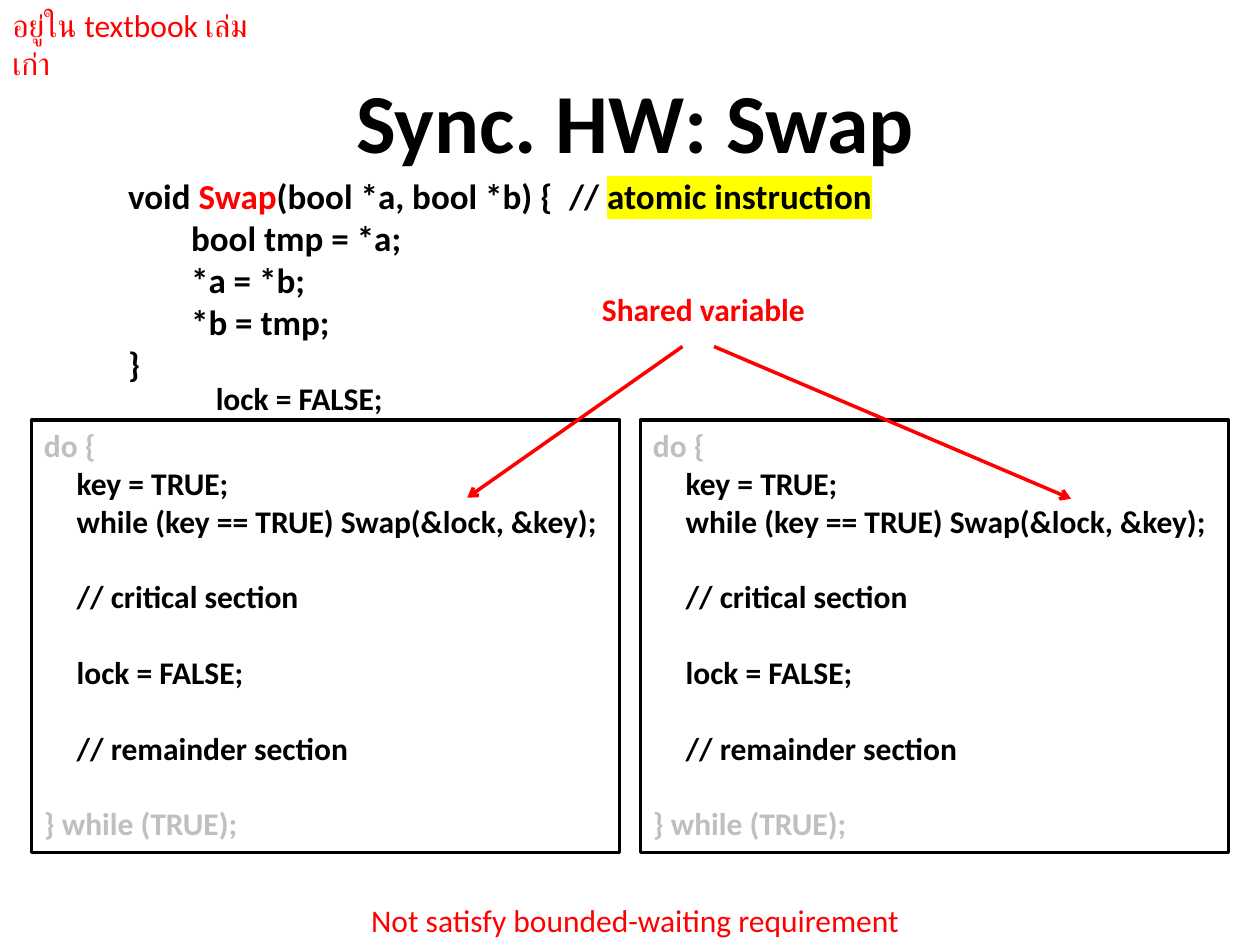
from typing import NamedTuple

from lxml import etree
from pptx import Presentation, util as u
from pptx.dml.color import RGBColor
from pptx.enum import shapes, text
from pptx.oxml.ns import qn

COLORS = {"ink": "000000", "accent": "FF0000", "muted": "BFBFBF", "mark": "FFFF00"}
FONT = "Calibri"
CELL = u.Inches(1 / 12)  # the slide is a grid of 120 columns by 90 rows
COLS, ROWS = 120, 90
LINE = 21.6  # height in points of one 18 pt line


class Box(NamedTuple):
    col: float
    row: float
    cols: float
    rows: float


class Label(NamedTuple):
    text: str
    box: Box
    color: str = "accent"
    bold: bool = False
    align: text.PP_ALIGN = text.PP_ALIGN.CENTER


class Arrow(NamedTuple):
    col: float
    row: float
    to_col: float
    to_row: float


class CodeLine(NamedTuple):
    text: str
    color: str = "ink"
    indent: float = 0.26
    gap: float = 0


TITLE_BOX = Box(7, 6, 107, 10.9)
SWAP_BOX = Box(11, 16, 102, 21.4)
PROCESS_BOXES = [Box(col, 40, 56, 41.2) for col in (3, 61)]
SWAP_BODY = ["bool tmp = *a;", "*a = *b;", "*b = tmp;"]
PROCESS_CODE = [
    CodeLine("do {", "muted", 0),
    CodeLine("key = TRUE;"),
    CodeLine("while (key == TRUE) Swap(&lock, &key);"),
    CodeLine("// critical section", gap=LINE),
    CodeLine("lock = FALSE;", gap=LINE),
    CodeLine("// remainder section", gap=LINE),
    CodeLine("} while (TRUE);", "muted", 0, LINE),
]
ARROWS = [Arrow(65, 33, 44.5, 47.4), Arrow(68, 33, 102, 47.5)]
LABELS = [
    Label("Shared variable", Box(55, 27, 24, 4.8), bold=True),
    Label("lock = FALSE;", Box(14.5, 35.5, 28, 4.8), "ink", True),
    Label("Not satisfy bounded-waiting requirement", Box(11, 85.2, 99, 4.8)),
    Label("อยู่ใน textbook เล่มเก่า", Box(0, 0, 28, 4.8), align=text.PP_ALIGN.LEFT),
]


def emu(cells: float) -> int:
    return round(cells * CELL)


def rgb(name: str) -> RGBColor:
    return RGBColor.from_string(COLORS[name])


def place(sp, box: Box) -> None:
    sp.left, sp.top, sp.width, sp.height = map(emu, box)


def setup_frame(sp):
    tf = sp.text_frame
    tf.word_wrap = True
    tf.auto_size = text.MSO_AUTO_SIZE.NONE
    tf.vertical_anchor = text.MSO_ANCHOR.TOP
    return tf


def add_run(p, words: str, *, size: float = 18, color: str = "ink",
            bold: bool = True, mark: str = "") -> None:
    r = p.add_run()
    r.text = words
    r.font.name, r.font.size, r.font.bold = FONT, u.Pt(size), bold
    r.font.color.rgb = rgb(color)
    if mark:
        highlight = etree.Element(qn("a:highlight"))
        etree.SubElement(highlight, qn("a:srgbClr"), val=COLORS[mark])
        r.font._element.find(qn("a:solidFill")).addnext(highlight)


def add_paragraph(tf, *, indent: float = 0, gap: float = 0, tab: float = 0,
                  align: text.PP_ALIGN = text.PP_ALIGN.LEFT):
    """Start a bullet-free paragraph, using the empty first one if there is one."""
    first = tf.paragraphs[0]
    p = tf.add_paragraph() if first.runs else first
    p.alignment, p.space_before = align, u.Pt(gap)
    props = p._p.get_or_add_pPr()
    props.set("marL", str(u.Inches(indent)))
    props.set("indent", "0")
    etree.SubElement(props, qn("a:buNone"))
    if tab:
        tabs = etree.SubElement(props, qn("a:tabLst"))
        etree.SubElement(tabs, qn("a:tab"), pos=str(u.Inches(tab)), algn="l")
    return p


def fill_title(sp) -> None:
    place(sp, TITLE_BOX)
    p = add_paragraph(setup_frame(sp), align=text.PP_ALIGN.CENTER)
    add_run(p, "Sync. HW: Swap", size=48)


def fill_swap_code(sp) -> None:
    place(sp, SWAP_BOX)
    tf = setup_frame(sp)
    p = add_paragraph(tf, tab=3.5)
    add_run(p, "void ", size=20)
    add_run(p, "Swap", size=20, color="accent")
    add_run(p, "(bool *a, bool *b) {\t// ", size=20)
    add_run(p, "atomic instruction", size=20, mark="mark")
    for words in SWAP_BODY:
        add_run(add_paragraph(tf, indent=0.5), words, size=20)
    add_run(add_paragraph(tf), "}", size=20)


def add_process(s, box: Box) -> None:
    sp = s.shapes.add_shape(shapes.MSO_SHAPE.RECTANGLE, *map(emu, box))
    sp.shadow.inherit = False
    sp.fill.background()
    sp.line.color.rgb, sp.line.width = rgb("ink"), u.Pt(2)
    tf = setup_frame(sp)
    for line in PROCESS_CODE:
        p = add_paragraph(tf, indent=line.indent, gap=line.gap)
        add_run(p, line.text, color=line.color)


def add_arrow(s, arrow: Arrow) -> None:
    c = s.shapes.add_connector(shapes.MSO_CONNECTOR.STRAIGHT, *map(emu, arrow))
    c.line.color.rgb, c.line.width = rgb("accent"), u.Pt(2)
    etree.SubElement(c.line._get_or_add_ln(), qn("a:tailEnd"), type="arrow")
    etree.SubElement(c._element.spPr, qn("a:effectLst"))


def add_label(s, label: Label) -> None:
    sp = s.shapes.add_textbox(*map(emu, label.box))
    p = add_paragraph(setup_frame(sp), align=label.align)
    add_run(p, label.text, color=label.color, bold=label.bold)


def main() -> None:
    prs = Presentation()
    prs.slide_width, prs.slide_height = emu(COLS), emu(ROWS)
    s = prs.slides.add_slide(prs.slide_layouts[1])
    fill_title(s.shapes.title)
    fill_swap_code(s.placeholders[1])
    for box in PROCESS_BOXES:
        add_process(s, box)
    for arrow in ARROWS:
        add_arrow(s, arrow)
    for label in LABELS:
        add_label(s, label)
    prs.save("out.pptx")


if __name__ == "__main__":
    main()
